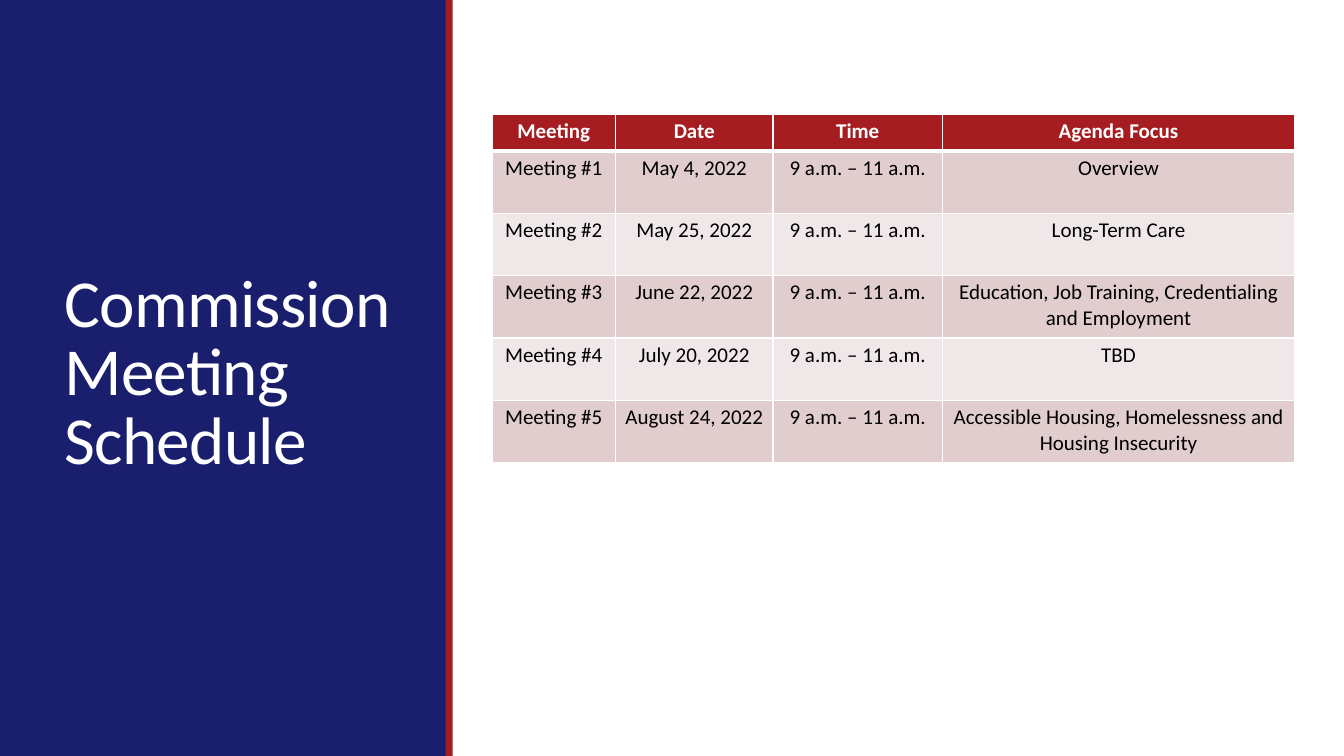
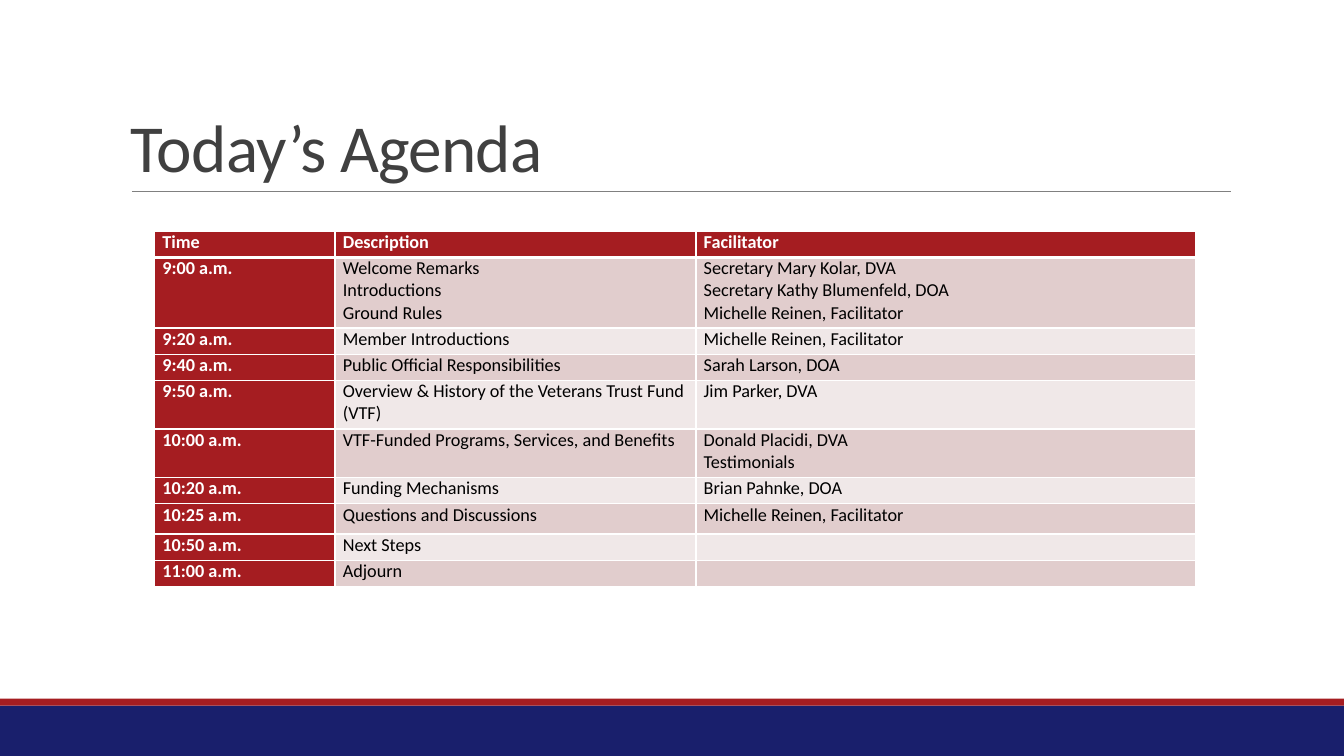
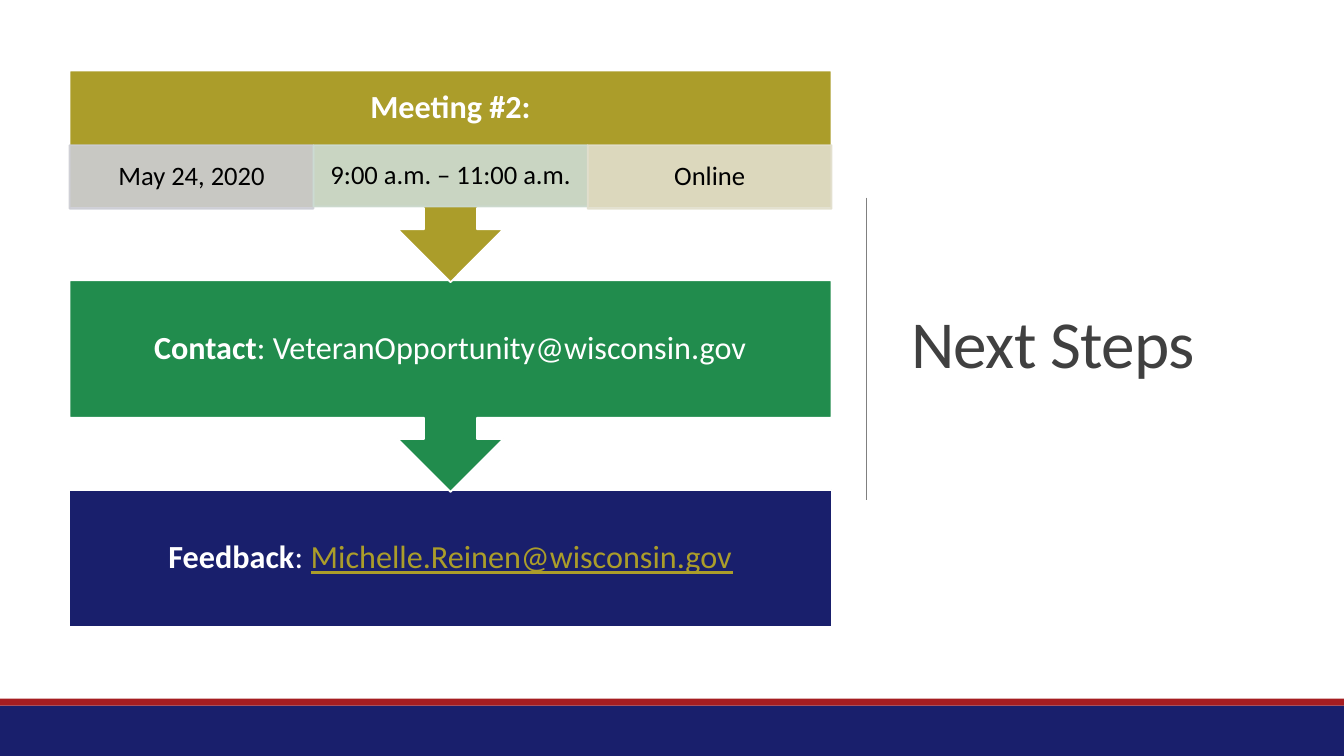
from lxml.etree import SubElement
from pptx import Presentation
from pptx.dml.color import RGBColor
from pptx.enum.shapes import MSO_CONNECTOR, MSO_SHAPE
from pptx.enum.text import MSO_ANCHOR, PP_ALIGN
from pptx.oxml.ns import qn
from pptx.util import Pt

NAVY, RED, GOLD, GREEN = "191F6C", "A51D21", "AB9D2A", "218C4D"
WHITE, BLACK, CHARCOAL, GREY = "FFFFFF", "000000", "404040", "808080"
BANDS = ["E1CDCD", "F0E8E8"]
FONT = "Calibri"
hex_color = RGBColor.from_string


def add_block(slide, fill, left, top, width, height, preset=MSO_SHAPE.RECTANGLE, outline=None):
    block = slide.shapes.add_shape(preset, Pt(left), Pt(top), Pt(width), Pt(height))
    block.shadow.inherit = False
    block.fill.solid()
    block.fill.fore_color.rgb = hex_color(fill)
    if outline:
        block.line.color.rgb = hex_color(outline)
        block.line.width = Pt(1.25)
    else:
        block.line.fill.background()
    return block


def write_line(frame, parts, size, color, spacing, align, anchor):
    """Fill the frame with one paragraph of text parts and return its runs."""
    frame.word_wrap = True
    frame.vertical_anchor = anchor
    paragraph = frame.paragraphs[0]
    paragraph.alignment = align
    paragraph.line_spacing = spacing
    paragraph.font.name = FONT
    paragraph.font.size = Pt(size)
    paragraph.font.color.rgb = hex_color(color)
    runs = []
    for part in parts:
        run = paragraph.add_run()
        run.text = part
        runs.append(run)
    return runs


deck = Presentation()
deck.slide_width, deck.slide_height = Pt(960), Pt(540)
schedule, agenda, next_steps = [deck.slides.add_slide(deck.slide_layouts[6]) for _ in range(3)]

# Side panel, footers and rules
add_block(schedule, NAVY, 0, 0, 319, 540)
add_block(schedule, RED, 318.3, 0, 5, 540)
for slide in (agenda, next_steps):
    add_block(slide, NAVY, 0, 504, 960, 36)
    add_block(slide, RED, 0, 499, 960, 5)

for slide, start, end in [(agenda, (94.3, 136.8), (879.1, 136.8)),
                          (next_steps, (618.5, 141.1), (618.5, 357.1))]:
    rule = slide.shapes.add_connector(MSO_CONNECTOR.STRAIGHT, *map(Pt, start + end))
    rule.line.color.rgb = hex_color(GREY)
    rule.line.width = Pt(0.5)
    SubElement(rule._element.spPr, qn("a:effectLst"))

# Titles
for slide, title, color, anchor, place in [
    (schedule, "Commission Meeting Schedule", WHITE, MSO_ANCHOR.MIDDLE, (38.9, 41, 251.3, 454.3)),
    (agenda, "Today’s Agenda", CHARCOAL, MSO_ANCHOR.BOTTOM, (86.4, 22.3, 792, 114.5)),
    (next_steps, "Next Steps", CHARCOAL, MSO_ANCHOR.MIDDLE, (643.7, 49.7, 265.7, 398.2)),
]:
    heading = slide.shapes.add_textbox(*map(Pt, place))
    for run in write_line(heading.text_frame, [title], 48, color, 0.85, PP_ALIGN.LEFT, anchor):
        run._r.get_or_add_rPr().set("spc", "-50")

# Tables
HOURS = "9 a.m. – 11 a.m."
meetings = [
    ("Meeting", "Date", "Time", "Agenda Focus"),
    ("Meeting #1", "May 4, 2022", HOURS, "Overview"),
    ("Meeting #2", "May 25, 2022", HOURS, "Long-Term Care"),
    ("Meeting #3", "June 22, 2022", HOURS, "Education, Job Training, Credentialing and Employment"),
    ("Meeting #4", "July 20, 2022", HOURS, "TBD"),
    ("Meeting #5", "August 24, 2022", HOURS,
     "Accessible Housing, Homelessness and Housing Insecurity"),
]
agenda_items = [
    ("Time", "Description", "Facilitator"),
    ("9:00 a.m.", "Welcome Remarks\nIntroductions\nGround Rules",
     "Secretary Mary Kolar, DVA\nSecretary Kathy Blumenfeld, DOA\nMichelle Reinen, Facilitator"),
    ("9:20 a.m.", "Member Introductions", "Michelle Reinen, Facilitator"),
    ("9:40 a.m.", "Public Official Responsibilities", "Sarah Larson, DOA"),
    ("9:50 a.m.", "Overview & History of the Veterans Trust Fund (VTF)", "Jim Parker, DVA"),
    ("10:00 a.m.", "VTF-Funded Programs, Services, and Benefits",
     "Donald Placidi, DVA\nTestimonials"),
    ("10:20 a.m.", "Funding Mechanisms", "Brian Pahnke, DOA"),
    ("10:25 a.m.", "Questions and Discussions", "Michelle Reinen, Facilitator"),
    ("10:50 a.m.", "Next Steps", ""),
    ("11:00 a.m.", "Adjourn", ""),
]
agenda_heights = [18.7, 50.4, 18.7, 18.7, 34.8, 34.8, 18.7, 21.6, 18.7, 18.7]

for slide, rows, left, top, widths, heights, size, align, margin, red_first_column in [
    (schedule, meetings, 351.4, 81.4, [88.2, 112.6, 121, 251.6], [26.6] + [44.5] * 5,
     15, PP_ALIGN.CENTER, 3, False),
    (agenda, agenda_items, 110.4, 165.2, [128.9, 257.8, 357.1], agenda_heights,
     13, PP_ALIGN.LEFT, 0, True),
]:
    table = slide.shapes.add_table(len(rows), len(widths), Pt(left), Pt(top),
                                   Pt(sum(widths)), Pt(sum(heights))).table
    for column, width in zip(table.columns, widths):
        column.width = Pt(width)
    for r, (row, height) in enumerate(zip(rows, heights)):
        table.rows[r].height = Pt(height)
        for c, text in enumerate(row):
            cell = table.cell(r, c)
            cell.margin_left = cell.margin_right = Pt(5.6)
            cell.margin_top = cell.margin_bottom = Pt(margin)
            for side in ("L", "R", "T", "B"):
                heavy = (r == 0 and side == "B") or (r == 1 and side == "T")
                border = SubElement(cell._tc.get_or_add_tcPr(), qn("a:ln" + side),
                                    w=str(Pt(3 if heavy else 1)))
                SubElement(SubElement(border, qn("a:solidFill")), qn("a:srgbClr"), val=WHITE)
            is_header = r == 0 or (red_first_column and c == 0)
            cell.fill.solid()
            cell.fill.fore_color.rgb = hex_color(RED if is_header else BANDS[(r - 1) % 2])
            cell.text = text
            for paragraph in cell.text_frame.paragraphs:
                paragraph.alignment = align
                paragraph.font.name = FONT
                paragraph.font.size = Pt(size)
                paragraph.font.bold = is_header
                paragraph.font.color.rgb = hex_color(WHITE if is_header else BLACK)
                if not text:
                    SubElement(paragraph._p, qn("a:endParaRPr"), sz=str(size * 100))

# Next steps, from the last one up, so that each arrow overlaps the step below
STEP_LEFT, STEP_TOP, STEP_PITCH = 49.7, 50.4, 149.8
for position, fill, preset, height, bottom_margin, parts in [
    (2, NAVY, MSO_SHAPE.RECTANGLE, 97.9, 13,
     ["Feedback", ": ", "Michelle.Reinen@wisconsin.gov"]),
    (1, GREEN, MSO_SHAPE.DOWN_ARROW_CALLOUT, 151.2, 13,
     ["Contact", ": VeteranOpportunity@wisconsin.gov"]),
    (0, GOLD, MSO_SHAPE.DOWN_ARROW_CALLOUT, 151.2, 58, ["Meeting #2:"]),
]:
    step = add_block(next_steps, fill, STEP_LEFT, STEP_TOP + position * STEP_PITCH,
                     544.3, height, preset, WHITE)
    frame = step.text_frame
    frame.margin_left = frame.margin_top = frame.margin_right = Pt(13)
    frame.margin_bottom = Pt(bottom_margin)
    runs = write_line(frame, parts, 23, WHITE, 0.9, PP_ALIGN.CENTER, MSO_ANCHOR.MIDDLE)
    runs[0].font.bold = True
    for address in runs[2:]:
        address.font.color.rgb = hex_color(GOLD)
        address.font.underline = True

detail_left = STEP_LEFT
for detail, fill, width, height in [
    ("May 24, 2020", "CCCDD4", 174.2, 45.4),
    ("9:00 a.m. – 11:00 a.m.", "CDDCD3", 195.9, 43.9),
    ("Online", "E2DFCD", 174.2, 45.4),
]:
    tile = add_block(next_steps, fill, detail_left, 103.7, width, height, outline=fill)
    for tint in tile._element.spPr.iter(qn("a:srgbClr")):
        SubElement(tint, qn("a:alpha"), val="90000")
    frame = tile.text_frame
    frame.margin_left = frame.margin_right = Pt(10.8)
    frame.margin_top = frame.margin_bottom = Pt(2)
    write_line(frame, [detail], 19, BLACK, 0.9, PP_ALIGN.CENTER, MSO_ANCHOR.MIDDLE)
    detail_left += width

deck.save("out.pptx")
